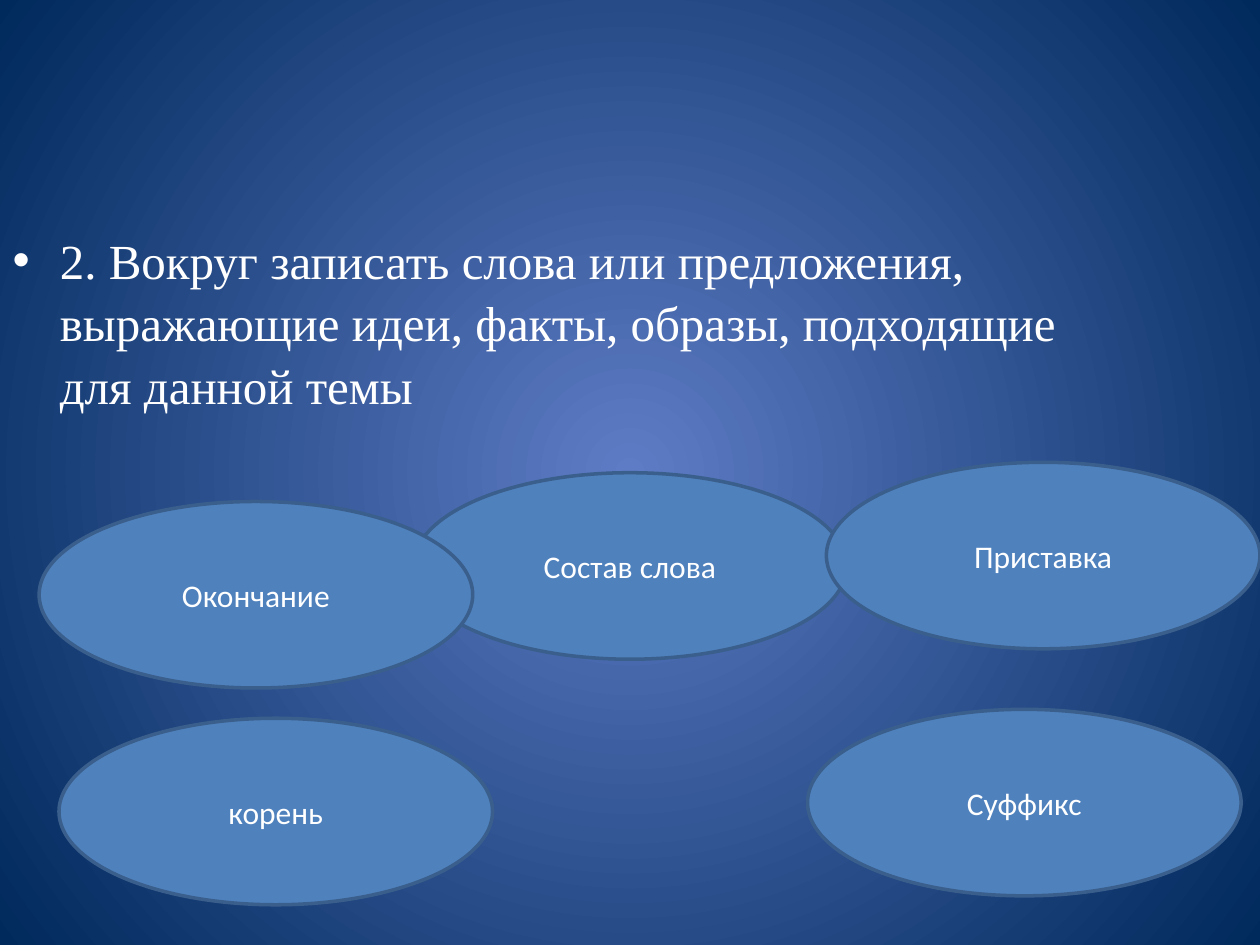
from dataclasses import dataclass

from lxml import etree
from pptx import Presentation
from pptx.dml.color import RGBColor
from pptx.enum.shapes import MSO_SHAPE
from pptx.enum.text import MSO_ANCHOR, MSO_AUTO_SIZE, PP_ALIGN
from pptx.oxml.ns import qn
from pptx.util import Cm, Pt

OVAL = MSO_SHAPE.OVAL
MIDDLE = MSO_ANCHOR.MIDDLE
CENTER = PP_ALIGN.CENTER
NO_AUTOFIT = MSO_AUTO_SIZE.NONE


@dataclass(frozen=True)
class Theme:
    glow: RGBColor = RGBColor.from_string("5E7CC5")
    edge: RGBColor = RGBColor.from_string("00295C")
    bubble: RGBColor = RGBColor.from_string("4F81BD")
    outline: RGBColor = RGBColor.from_string("3A5F8C")
    text: RGBColor = RGBColor.from_string("FFFFFF")
    task_font: str = "Times New Roman"
    bubble_font: str = "Calibri"
    task_size: Pt = Pt(28)
    bubble_size: Pt = Pt(18)
    outline_width: Pt = Pt(2)


THEME = Theme()

TASK = ("2. Вокруг записать слова или предложения, выражающие идеи, "
        "факты, образы, подходящие для данной темы")

# Bubble size and offsets inside the cluster, in cm, from back to front
BUBBLE_SIZE = (8.74, 3.76)
BUBBLES = [
    ("Состав слова", 7.54, 0.21),
    ("Окончание", 0, 0.79),
    ("корень", 0.4, 5.16),
    ("Приставка", 15.87, 0),
    ("Суффикс", 15.49, 4.98),
]


def style_font(font, name, size):
    font.name = name
    font.size = size
    font.color.rgb = THEME.text


def paint_background(slide):
    """Radial gradient that glows from the middle of the slide."""
    fill = slide.background.fill
    fill.gradient()
    for stop, color, position in zip(fill.gradient_stops,
                                     (THEME.glow, THEME.edge), (0, 1)):
        stop.color.rgb = color
        stop.position = position
    gradient = next(slide.element.iter(qn("a:gradFill")))
    linear = gradient.find(qn("a:lin"))
    radial = etree.Element(qn("a:path"), {"path": "circle"})
    etree.SubElement(radial, qn("a:fillToRect"),
                     {side: "50000" for side in "ltrb"})
    gradient.replace(linear, radial)


def place_task(slide, left, top, width, height):
    """Bulleted task in the body placeholder."""
    task = slide.placeholders[1]
    task.left, task.top = Cm(left), Cm(top)
    task.width, task.height = Cm(width), Cm(height)
    frame = task.text_frame
    frame.text = TASK
    frame.auto_size = NO_AUTOFIT
    paragraph = frame.paragraphs[0]
    paragraph.space_before = Pt(0)
    paragraph.line_spacing = 1.06
    style_font(paragraph.font, THEME.task_font, THEME.task_size)


def add_bubble(slide, label, left, top, width, height):
    bubble = slide.shapes.add_shape(OVAL, Cm(left), Cm(top),
                                    Cm(width), Cm(height))
    bubble.shadow.inherit = False
    bubble.fill.solid()
    bubble.fill.fore_color.rgb = THEME.bubble
    bubble.line.color.rgb = THEME.outline
    bubble.line.width = THEME.outline_width
    frame = bubble.text_frame
    frame.text = label
    frame.vertical_anchor = MIDDLE
    paragraph = frame.paragraphs[0]
    paragraph.alignment = CENTER
    style_font(paragraph.font, THEME.bubble_font, THEME.bubble_size)


def place_cluster(slide, left, top):
    """Topic bubble with the ideas around it."""
    for label, dx, dy in BUBBLES:
        add_bubble(slide, label, left + dx, top + dy, *BUBBLE_SIZE)


def main():
    deck = Presentation()
    deck.slide_width, deck.slide_height = Cm(25.4), Cm(19.05)
    slide = deck.slides.add_slide(deck.slide_layouts[1])

    # The slide has no title
    title = slide.shapes.title.element
    title.getparent().remove(title)

    paint_background(slide)
    place_task(slide, 0, 4.45, 22.86, 12.57)
    place_cluster(slide, 0.79, 9.32)
    deck.save("out.pptx")


if __name__ == "__main__":
    main()
